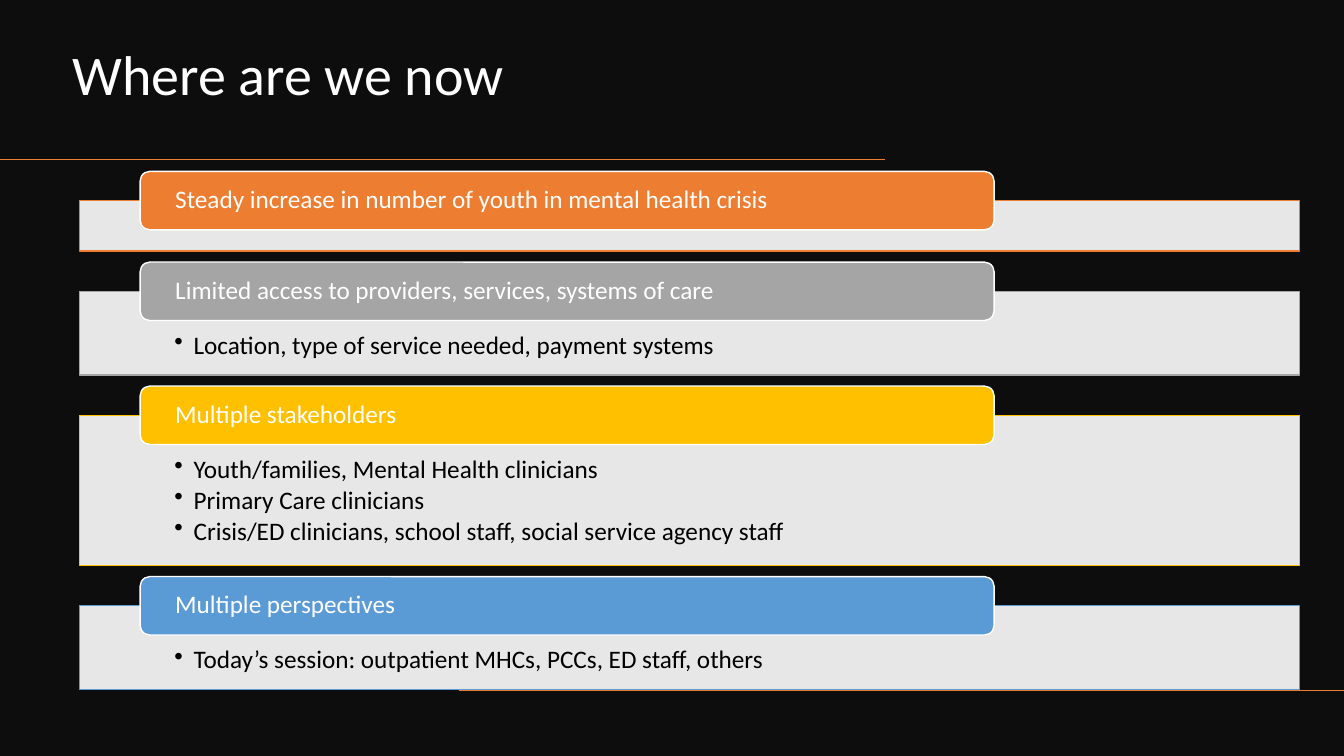
import pptx
import pptx.util
import pptx.dml.color
import pptx.enum.shapes
import pptx.enum.text
import pptx.oxml.ns
import lxml.etree

Inches = pptx.util.Inches
Pt = pptx.util.Pt
Shape = pptx.enum.shapes.MSO_SHAPE
Anchor = pptx.enum.text.MSO_ANCHOR
Align = pptx.enum.text.PP_ALIGN
qn = pptx.oxml.ns.qn

COLORS = {
    "back": "0D0D0D", "white": "FFFFFF", "black": "000000",
    "orange": "ED7D31", "gray": "A5A5A5", "gold": "FFC000", "blue": "5B9BD5",
}

# Header, color, panel height, bullets
TOPICS = [
    ("Steady increase in number of youth in mental health crisis", "orange", 0.5, []),
    ("Limited access to providers, services, systems of care", "gray", 0.83,
     ["Location, type of service needed, payment systems"]),
    ("Multiple stakeholders", "gold", 1.49,
     ["Youth/families, Mental Health clinicians",
      "Primary Care clinicians",
      "Crisis/ED clinicians, school staff, social service agency staff"]),
    ("Multiple perspectives", "blue", 0.83,
     ["Today’s session: outpatient MHCs, PCCs, ED staff, others"]),
]
FIRST_TOP = 1.99
GAP = 0.4
RISE = 0.29  # how far a header stands above its panel


class Deck:
    font = "Calibri"

    def __init__(self, width, height):
        self.prs = pptx.Presentation()
        self.prs.slide_width = Inches(width)
        self.prs.slide_height = Inches(height)
        self.slide = self.prs.slides.add_slide(self.prs.slide_layouts[5])
        self.paint(self.slide.background.fill, "back")

    def paint(self, fill, color):
        fill.solid()
        fill.fore_color.rgb = pptx.dml.color.RGBColor.from_string(COLORS[color])

    def add_text(self, par, text, size, color):
        par.alignment = Align.LEFT
        par.line_spacing = 0.9
        run = par.add_run()
        run.text = text
        run.font.name = self.font
        run.font.size = Pt(size)
        self.paint(run.font.fill, color)

    def frame(self, shape, anchor, left, top=0, bottom=0):
        """Set the anchor and insets; the right inset equals the left."""
        box = shape.text_frame
        box.word_wrap = True
        box.vertical_anchor = anchor
        box.margin_left = box.margin_right = Inches(left)
        box.margin_top, box.margin_bottom = Inches(top), Inches(bottom)
        return box

    def title(self, text, left, top, width, height):
        shape = self.slide.shapes.title
        shape.left, shape.top = Inches(left), Inches(top)
        shape.width, shape.height = Inches(width), Inches(height)
        box = self.frame(shape, Anchor.BOTTOM, 0.1, 0.05, 0.05)
        box.auto_size = pptx.enum.text.MSO_AUTO_SIZE.NONE
        self.add_text(box.paragraphs[0], text, 40, "white")

    def rule(self, start, end, y):
        line = self.slide.shapes.add_connector(
            pptx.enum.shapes.MSO_CONNECTOR.STRAIGHT,
            Inches(start), Inches(y), Inches(end), Inches(y))
        self.paint(line.line.fill, "orange")
        line.line.width = Pt(1)
        props = line._element.find(qn("p:spPr"))
        lxml.etree.SubElement(props, qn("a:effectLst"))

    def block(self, kind, place, fill, edge):
        shape = self.slide.shapes.add_shape(kind, *map(Inches, place))
        shape.shadow.inherit = False
        self.paint(shape.fill, fill)
        self.paint(shape.line.fill, edge)
        shape.line.width = Pt(1)
        return shape

    def bullet(self, par):
        props = par._p.get_or_add_pPr()
        props.set("marL", str(Inches(0.19)))
        props.set("indent", str(-Inches(0.19)))
        lxml.etree.SubElement(props, qn("a:buChar")).set("char", "•")

    def panel(self, top, height, color, items):
        shape = self.block(Shape.RECTANGLE, (0.79, top, 12.1, height), "white", color)
        tint = shape._element.spPr.find(qn("a:solidFill"))[0]
        lxml.etree.SubElement(tint, qn("a:alpha")).set("val", "90000")
        box = self.frame(shape, Anchor.TOP, 0.94, 0.41, 0.14)
        for i, item in enumerate(items):
            par = box.add_paragraph() if i else box.paragraphs[0]
            par.level = 1
            self.add_text(par, item, 18, "black")
            par.space_after = Pt(2.7)
            self.bullet(par)

    def header(self, top, color, text):
        shape = self.block(Shape.ROUNDED_RECTANGLE, (1.39, top, 8.47, 0.58), color, "white")
        box = self.frame(shape, Anchor.MIDDLE, 0.32)
        self.add_text(box.paragraphs[0], text, 18, "white")


def main():
    deck = Deck(13.33, 7.5)
    deck.title("Where are we now", 0.62, 0, 7.86, 1.12)
    deck.rule(8.78, 0, 1.58)
    deck.rule(13.33, 4.55, 6.85)
    top = FIRST_TOP
    for text, color, height, items in TOPICS:
        deck.panel(top, height, color, items)
        deck.header(top - RISE, color, text)
        top += height + GAP
    deck.prs.save("out.pptx")


if __name__ == "__main__":
    main()
